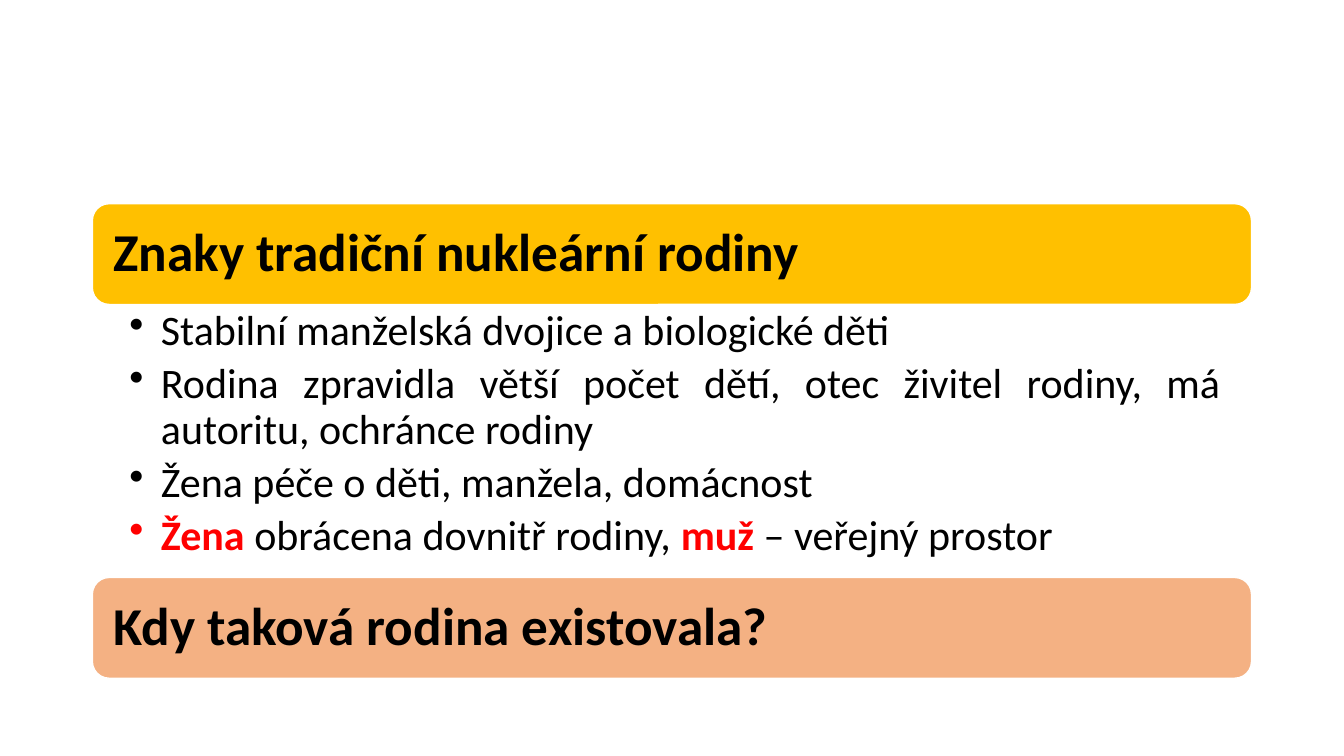
import pptx
import pptx.util
import pptx.dml.color
import pptx.enum.shapes
import pptx.enum.text
import pptx.oxml.ns
import lxml.etree

Pt = pptx.util.Pt
RGB = pptx.dml.color.RGBColor.from_string

# Content: banners, and bullets as (text, emphasised) runs
HEADING = "Znaky tradiční nukleární rodiny"
QUESTION = "Kdy taková rodina existovala?"
BULLETS = [
    [("Stabilní manželská dvojice a biologické děti", False)],
    [("Rodina zpravidla větší počet dětí, otec živitel rodiny, má autoritu, "
      "ochránce rodiny", False)],
    [("Žena péče o děti, manžela, domácnost", False)],
    [("Žena", True), (" obrácena dovnitř rodiny, ", False),
     ("muž", True), (" – veřejný prostor", False)],
]

THEME = {
    "font": "Calibri", "banner_size": 38, "bullet_size": 30,
    "text": "000000", "accent": "FF0000", "outline": "FFFFFF",
    "heading_fill": "FFC000", "question_fill": "F4B183",
}

# Layout: banner, list and banner stacked without gaps
LEFT, TOP, WIDTH = 66, 145.5, 828
BANNER_H, LIST_H = 72, 195
LIST_TOP = TOP + BANNER_H
QUESTION_TOP = LIST_TOP + LIST_H
INDENT = 22.5


def set_frame(tf, left, top, right, bottom, anchor):
    tf.word_wrap = True
    tf.margin_left, tf.margin_top = Pt(left), Pt(top)
    tf.margin_right, tf.margin_bottom = Pt(right), Pt(bottom)
    tf.vertical_anchor = anchor


def style_run(r, size, color, bold):
    r.font.name = THEME["font"]
    r.font.size = Pt(size)
    r.font.bold = bold
    r.font.color.rgb = RGB(color)


def add_banner(s, text, top, fill):
    sp = s.shapes.add_shape(pptx.enum.shapes.MSO_SHAPE.ROUNDED_RECTANGLE,
                            Pt(LEFT), Pt(top), Pt(WIDTH), Pt(BANNER_H))
    sp.shadow.inherit = False
    sp.fill.solid()
    sp.fill.fore_color.rgb = RGB(fill)
    sp.line.color.rgb = RGB(THEME["outline"])
    sp.line.width = Pt(1)
    tf = sp.text_frame
    set_frame(tf, 11.5, 11.5, 11.5, 11.5, pptx.enum.text.MSO_ANCHOR.MIDDLE)
    tf.text = text
    p = tf.paragraphs[0]
    p.alignment = pptx.enum.text.PP_ALIGN.LEFT
    p.line_spacing = 0.9
    style_run(p.runs[0], THEME["banner_size"], THEME["text"], True)


def add_bullet(p):
    pPr = p._p.get_or_add_pPr()
    pPr.set("marL", str(Pt(INDENT)))
    pPr.set("indent", str(-Pt(INDENT)))
    bu = lxml.etree.SubElement(pPr, pptx.oxml.ns.qn("a:buChar"))
    bu.set("char", "•")


def add_list(s):
    tf = s.shapes.add_textbox(Pt(LEFT), Pt(LIST_TOP), Pt(WIDTH), Pt(LIST_H)).text_frame
    set_frame(tf, 26.5, 3.6, 21.5, 3.6, pptx.enum.text.MSO_ANCHOR.TOP)
    for i, runs in enumerate(BULLETS):
        p = tf.add_paragraph() if i else tf.paragraphs[0]
        p.level = 1
        p.alignment = pptx.enum.text.PP_ALIGN.JUSTIFY
        p.line_spacing = 0.9
        p.space_after = Pt(5.5)
        add_bullet(p)
        for text, strong in runs:
            r = p.add_run()
            r.text = text
            style_run(r, THEME["bullet_size"],
                      THEME["accent" if strong else "text"], strong)


def main():
    prs = pptx.Presentation()
    prs.slide_width, prs.slide_height = Pt(960), Pt(540)
    s = prs.slides.add_slide(prs.slide_layouts[6])
    add_banner(s, HEADING, TOP, THEME["heading_fill"])
    add_list(s)
    add_banner(s, QUESTION, QUESTION_TOP, THEME["question_fill"])
    prs.save("out.pptx")


if __name__ == "__main__":
    main()
